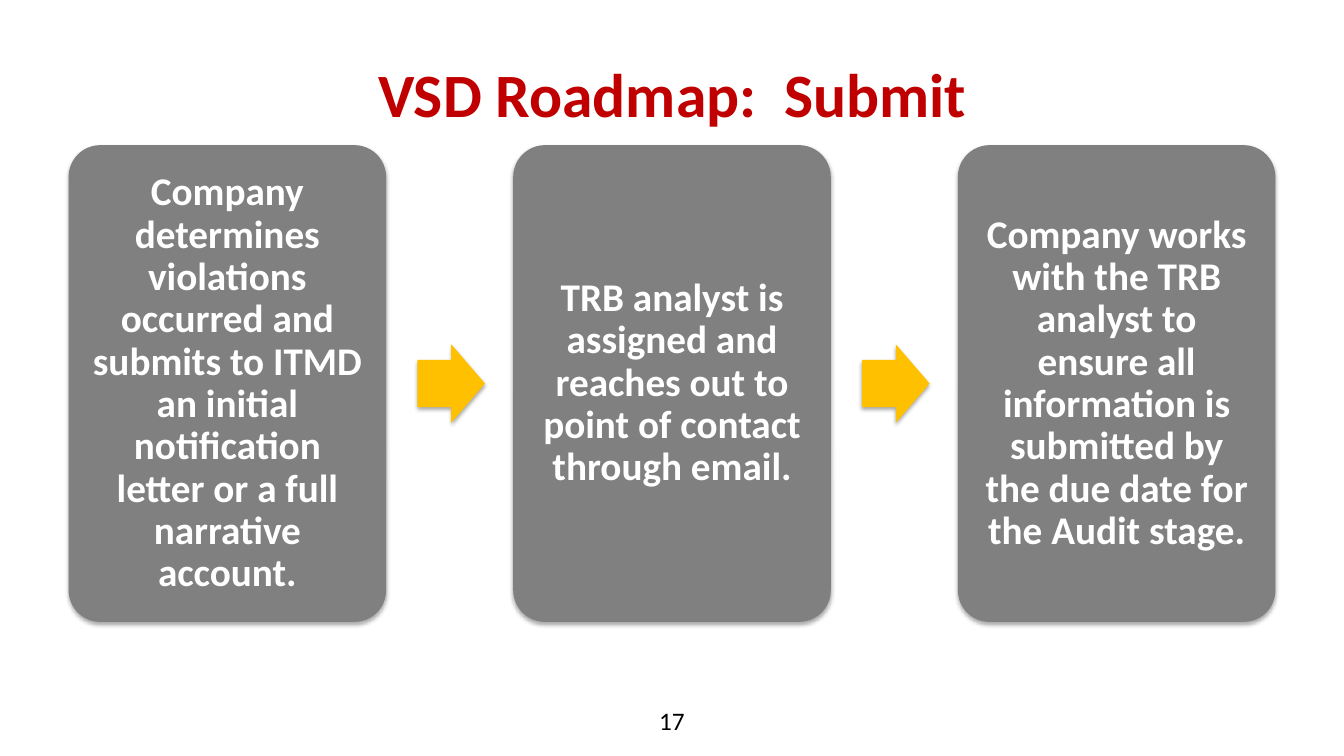
"""Build the VSD roadmap slide: three process cards joined by arrows."""
import lxml.etree
import pptx
import pptx.dml.color
import pptx.enum.shapes
import pptx.enum.text
import pptx.oxml.ns
import pptx.util

Inches = pptx.util.Inches
Pt = pptx.util.Pt
RGBColor = pptx.dml.color.RGBColor
Shapes = pptx.enum.shapes.MSO_SHAPE
Anchor = pptx.enum.text.MSO_ANCHOR

RED = RGBColor(0xC0, 0x00, 0x00)
GRAY = RGBColor(0x80, 0x80, 0x80)
GOLD = RGBColor(0xFF, 0xC0, 0x00)
WHITE = RGBColor(0xFF, 0xFF, 0xFF)
BLACK = RGBColor(0x00, 0x00, 0x00)

STEPS = [
    "Company determines violations occurred and submits to ITMD an initial "
    "notification letter or a full narrative account.",
    "TRB analyst is assigned and reaches out to point of contact through email.",
    "Company works with the TRB analyst to ensure all information is submitted "
    "by the due date for the Audit stage.",
]
FIRST_LEFT, STEP_PITCH = 0.68, 4.41
CARD_TOP, CARD_WIDTH, CARD_HEIGHT = 1.44, 3.15, 4.73
ARROW_OFFSET, ARROW_WIDTH, ARROW_HEIGHT = 3.46, 0.67, 0.78


class RoadmapSlide:
    """Hold the shared style and draw elements on one slide."""

    font_name = "Calibri"

    def __init__(self, slide):
        self.slide = slide

    def set_text(self, frame, text, size, color, bold, anchor):
        frame.word_wrap = True
        frame.vertical_anchor = anchor
        paragraph = frame.paragraphs[0]
        paragraph.text = text
        paragraph.alignment = pptx.enum.text.PP_ALIGN.CENTER
        paragraph.font.name = self.font_name
        paragraph.font.size = Pt(size)
        paragraph.font.bold = bold
        paragraph.font.color.rgb = color
        return paragraph

    def label(self, text, box, size, color, bold=False, anchor=Anchor.TOP):
        holder = self.slide.shapes.add_textbox(*map(Inches, box))
        self.set_text(holder.text_frame, text, size, color, bold, anchor)

    def block(self, kind, box, fill, adjustments):
        block = self.slide.shapes.add_shape(kind, *map(Inches, box))
        for index, value in enumerate(adjustments):
            block.adjustments[index] = value
        block.fill.solid()
        block.fill.fore_color.rgb = fill
        block.line.fill.background()
        self.cast_shadow(block)
        return block

    def cast_shadow(self, block):
        qn = pptx.oxml.ns.qn
        block.shadow.inherit = False
        effects = block.element.spPr.find(qn("a:effectLst"))
        shadow = lxml.etree.SubElement(
            effects, qn("a:outerShdw"), blurRad=str(Pt(3.1)), dist=str(Pt(1.8)),
            dir="5400000", rotWithShape="0")
        color = lxml.etree.SubElement(shadow, qn("a:srgbClr"), val=str(BLACK))
        lxml.etree.SubElement(color, qn("a:alpha"), val="35000")

    def card(self, left, text):
        box = (left, CARD_TOP, CARD_WIDTH, CARD_HEIGHT)
        card = self.block(Shapes.ROUNDED_RECTANGLE, box, GRAY, [0.1])
        frame = card.text_frame
        frame.margin_left = frame.margin_right = Inches(0.12)
        frame.margin_top = frame.margin_bottom = Inches(0.12)
        paragraph = self.set_text(frame, text, 28, WHITE, True, Anchor.MIDDLE)
        paragraph.line_spacing = 0.9

    def arrow(self, left):
        top = CARD_TOP + (CARD_HEIGHT - ARROW_HEIGHT) / 2
        box = (left, top, ARROW_WIDTH, ARROW_HEIGHT)
        self.block(Shapes.RIGHT_ARROW, box, GOLD, [0.6, 0.5])


def main():
    deck = pptx.Presentation()
    deck.slide_width = Inches(13.33)
    deck.slide_height = Inches(7.5)
    roadmap = RoadmapSlide(deck.slides.add_slide(deck.slide_layouts[6]))
    roadmap.label("VSD Roadmap:  Submit", (0.67, 0.3, 12, 1.25), 44, RED,
                  bold=True, anchor=Anchor.MIDDLE)
    for index, step in enumerate(STEPS):
        left = FIRST_LEFT + index * STEP_PITCH
        roadmap.card(left, step)
        if index < len(STEPS) - 1:
            roadmap.arrow(left + ARROW_OFFSET)
    roadmap.label("17", (5.11, 6.95, 3.11, 0.4), 18, BLACK)
    deck.save("out.pptx")


if __name__ == "__main__":
    main()
